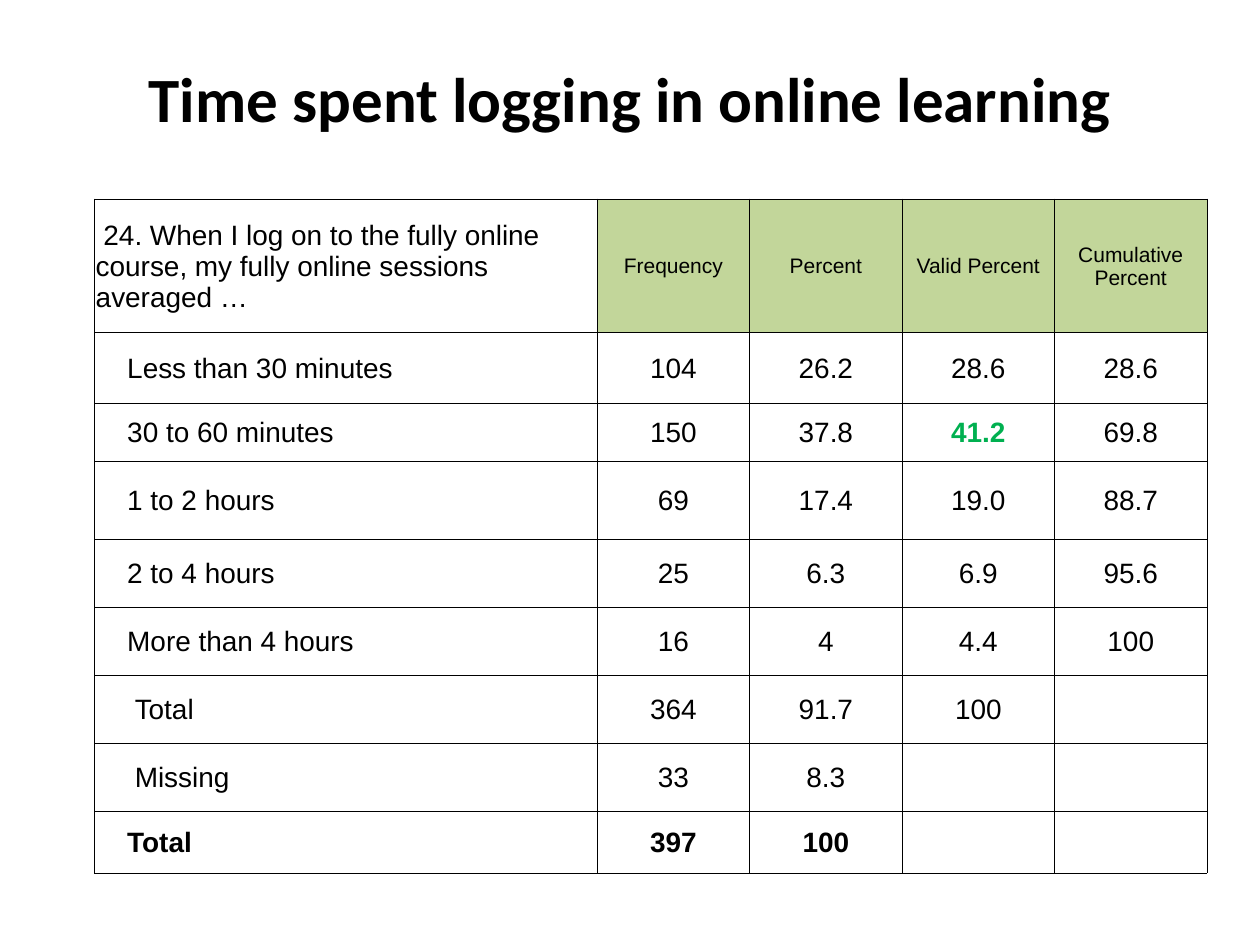
from lxml import etree
from pptx import Presentation
from pptx.dml.color import RGBColor
from pptx.enum import text
from pptx.oxml import ns
from pptx.util import Inches, Pt

BLACK = RGBColor(0x00, 0x00, 0x00)
WHITE = RGBColor(0xFF, 0xFF, 0xFF)
HEADER_GREEN = RGBColor(0xC2, 0xD6, 0x9A)
HIGHLIGHT_GREEN = RGBColor(0x00, 0xB0, 0x50)

QUESTION = " 24. When I log on to the fully online course, my fully online sessions averaged …"
ROWS = [
    (QUESTION, "Frequency", "Percent", "Valid Percent", "Cumulative Percent"),
    ("Less than 30 minutes", "104", "26.2", "28.6", "28.6"),
    ("30 to 60 minutes", "150", "37.8", "41.2", "69.8"),
    ("1 to 2 hours", "69", "17.4", "19.0", "88.7"),
    ("2 to 4 hours", "25", "6.3", "6.9", "95.6"),
    ("More than 4 hours", "16", "4", "4.4", "100"),
    ("Total", "364", "91.7", "100", ""),
    ("Missing", "33", "8.3", "", ""),
    ("Total", "397", "100", "", ""),
]
COLUMN_WIDTHS = [3.99] + [1.21] * 4
ROW_HEIGHTS = [1.06, 0.56, 0.46, 0.62, 0.54, 0.54, 0.54, 0.54, 0.49]
LABEL_INDENTS = [0.01] + [0.26] * 5 + [0.32] * 2 + [0.26]
HIGHLIGHT_CELL = (2, 3)
GRAND_TOTAL_ROW = len(ROWS) - 1


def add_borders(cell):
    properties = cell._tc.get_or_add_tcPr()
    for side in ("lnL", "lnR", "lnT", "lnB"):
        line = etree.SubElement(properties, ns.qn(f"a:{side}"), w=str(Pt(0.5)))
        fill = etree.SubElement(line, ns.qn("a:solidFill"))
        etree.SubElement(fill, ns.qn("a:srgbClr"), val=str(BLACK))


def write_run(paragraph, words, font_name, size, bold, color=BLACK):
    run = paragraph.add_run()
    run.text = words
    run.font.name = font_name
    run.font.size = Pt(size)
    run.font.bold = bold
    run.font.color.rgb = color


presentation = Presentation()
presentation.slide_width = Inches(10)
presentation.slide_height = Inches(7.5)
slide = presentation.slides.add_slide(presentation.slide_layouts[5])

title = slide.shapes.title
title.left, title.top = Inches(0.5), Inches(0.3)
title.width, title.height = Inches(9), Inches(0.95)
title.text_frame.vertical_anchor = text.MSO_ANCHOR.MIDDLE
title_paragraph = title.text_frame.paragraphs[0]
title_paragraph.alignment = text.PP_ALIGN.CENTER
write_run(title_paragraph, "Time spent logging in online learning", "Calibri", 36, True)

table = slide.shapes.add_table(
    len(ROWS), len(COLUMN_WIDTHS), Inches(0.75), Inches(1.58),
    Inches(sum(COLUMN_WIDTHS)), Inches(sum(ROW_HEIGHTS)),
).table
table.first_row = False
table.horz_banding = False
for column, width in zip(table.columns, COLUMN_WIDTHS):
    column.width = Inches(width)
for row, height in zip(table.rows, ROW_HEIGHTS):
    row.height = Inches(height)

for row_index, values in enumerate(ROWS):
    for column_index, value in enumerate(values):
        cell = table.cell(row_index, column_index)
        is_label = column_index == 0
        is_header = row_index == 0 and not is_label
        is_highlight = (row_index, column_index) == HIGHLIGHT_CELL

        add_borders(cell)
        cell.fill.solid()
        cell.fill.fore_color.rgb = HEADER_GREEN if is_header else WHITE
        cell.vertical_anchor = text.MSO_ANCHOR.MIDDLE
        cell.margin_left = Inches(LABEL_INDENTS[row_index] if is_label else 0.01)
        cell.margin_right = cell.margin_top = Inches(0.01)
        cell.margin_bottom = 0

        if value:
            paragraph = cell.text_frame.paragraphs[0]
            paragraph.alignment = text.PP_ALIGN.LEFT if is_label else text.PP_ALIGN.CENTER
            write_run(
                paragraph, value, "Arial", 12 if is_header else 16,
                is_highlight or row_index == GRAND_TOTAL_ROW,
                HIGHLIGHT_GREEN if is_highlight else BLACK,
            )

presentation.save("out.pptx")
